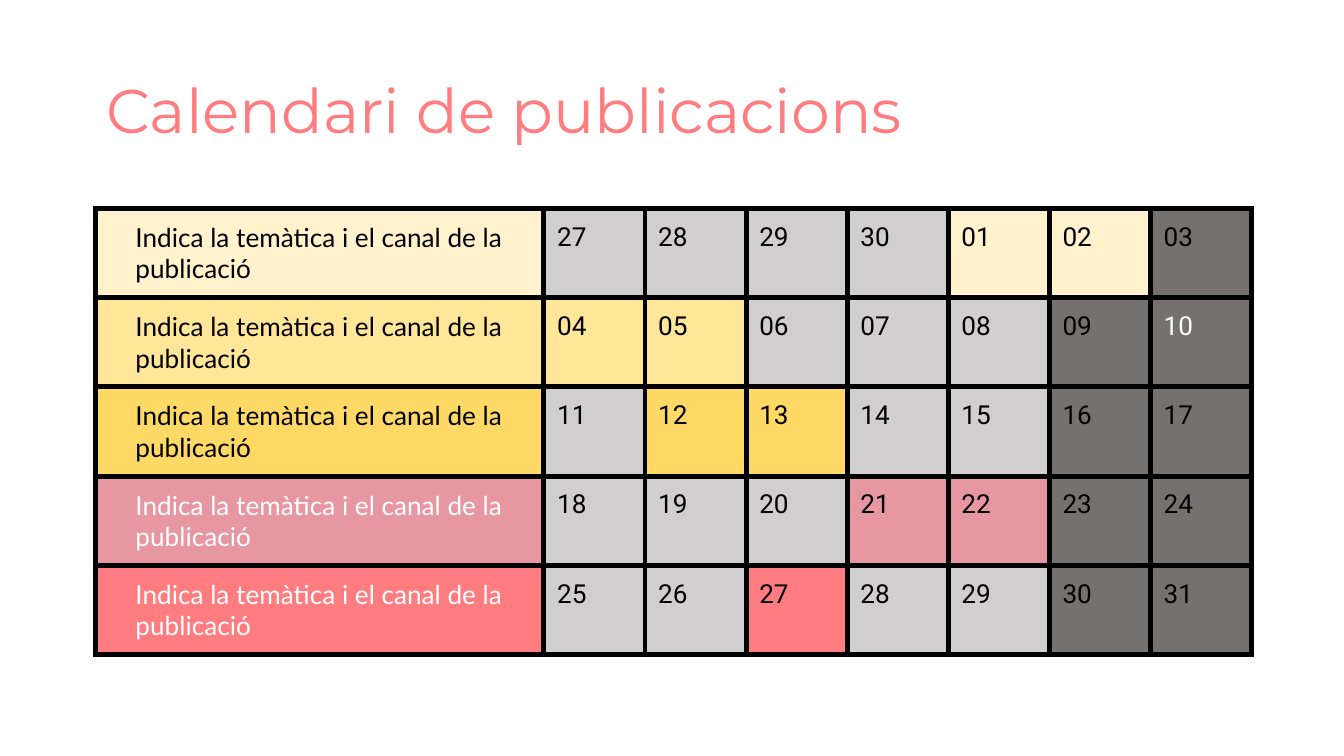
"""Build a slide with a five-week publication calendar."""
from dataclasses import dataclass

from lxml import etree
from pptx import Presentation
from pptx.dml.color import RGBColor
from pptx.enum.text import MSO_ANCHOR, MSO_AUTO_SIZE, PP_ALIGN
from pptx.oxml.ns import qn
from pptx.util import Cm, Pt

MIDDLE = MSO_ANCHOR.MIDDLE
TOP = MSO_ANCHOR.TOP
LEFT = PP_ALIGN.LEFT
NO_AUTOFIT = MSO_AUTO_SIZE.NONE

BLACK = RGBColor(0x00, 0x00, 0x00)
WHITE = RGBColor(0xFF, 0xFF, 0xFF)
CORAL = RGBColor(0xFF, 0x7C, 0x80)
PINK = RGBColor(0xE7, 0x97, 0xA2)
CREAM = RGBColor(0xFF, 0xF2, 0xCC)
YELLOW = RGBColor(0xFF, 0xE6, 0x99)
GOLD = RGBColor(0xFF, 0xD9, 0x66)
LIGHT_GREY = RGBColor(0xD0, 0xCE, 0xCE)
DARK_GREY = RGBColor(0x76, 0x71, 0x71)

TOPIC = "Indica la temàtica i el canal de la publicació"
TOPIC_WIDTH = Cm(8.48)
DAY_WIDTH = Cm(1.91)
WEEK_HEIGHT = Cm(1.65)
DAYS_PER_WEEK = 7
FIRST_DAY = 27
PREVIOUS_MONTH_LENGTH = 30
BORDER_WIDTH = Pt(3)


@dataclass(frozen=True)
class Week:
    colour: RGBColor
    topic_colour: RGBColor
    publishing_days: tuple[int, ...]
    weekend: tuple[int, ...] = (5, 6)
    white_days: tuple[int, ...] = ()


WEEKS = (
    Week(CREAM, BLACK, (4, 5), weekend=(6,)),
    Week(YELLOW, BLACK, (0, 1), white_days=(6,)),
    Week(GOLD, BLACK, (1, 2)),
    Week(PINK, WHITE, (3, 4)),
    Week(CORAL, WHITE, (2,)),
)


def format_text(frame, font: str, size: float, colour: RGBColor) -> None:
    for paragraph in frame.paragraphs:
        paragraph.alignment = LEFT
        for span in paragraph.runs:
            span.font.name = font
            span.font.size = Pt(size)
            span.font.color.rgb = colour


def add_borders(cell) -> None:
    properties = cell._tc.get_or_add_tcPr()
    for side in ("a:lnL", "a:lnR", "a:lnT", "a:lnB"):
        line = etree.SubElement(properties, qn(side), w=str(BORDER_WIDTH))
        fill = etree.SubElement(line, qn("a:solidFill"))
        etree.SubElement(fill, qn("a:srgbClr"), val=str(BLACK))


def fill_cell(cell, text: str, font: str, colour: RGBColor, background: RGBColor) -> None:
    add_borders(cell)
    cell.fill.solid()
    cell.fill.fore_color.rgb = background
    cell.margin_left = cell.margin_right = Cm(0.25)
    cell.margin_top = cell.margin_bottom = Cm(0.25)
    cell.vertical_anchor = TOP
    cell.text_frame.text = text
    format_text(cell.text_frame, font, 14, colour)


def draw_week(table, row: int, week: Week) -> None:
    table.rows[row].height = WEEK_HEIGHT
    topic = table.cell(row, 0)
    fill_cell(topic, TOPIC, "Lato", week.topic_colour, week.colour)
    topic.margin_left, topic.margin_right = Cm(0.76), Cm(0.51)
    topic.vertical_anchor = MIDDLE
    for day in range(DAYS_PER_WEEK):
        date = FIRST_DAY + row * DAYS_PER_WEEK + day
        if date > PREVIOUS_MONTH_LENGTH:
            date -= PREVIOUS_MONTH_LENGTH
        background = LIGHT_GREY
        if day in week.publishing_days:
            background = week.colour
        elif day in week.weekend:
            background = DARK_GREY
        colour = WHITE if day in week.white_days else BLACK
        fill_cell(table.cell(row, day + 1), f"{date:02d}", "Roboto", colour, background)


def draw_title(page, text: str) -> None:
    title = page.shapes.title
    title.left, title.top = Cm(1.75), Cm(0.76)
    title.width, title.height = Cm(21.9), Cm(2.77)
    frame = title.text_frame
    frame.text = text
    frame.word_wrap = True
    frame.auto_size = NO_AUTOFIT
    frame.vertical_anchor = MIDDLE
    frame.paragraphs[0].line_spacing = 0.9
    format_text(frame, "Montserrat", 33, CORAL)


def draw_calendar(page) -> None:
    table = page.shapes.add_table(
        len(WEEKS), DAYS_PER_WEEK + 1, Cm(1.8), Cm(3.94),
        TOPIC_WIDTH + DAYS_PER_WEEK * DAY_WIDTH, len(WEEKS) * WEEK_HEIGHT,
    ).table
    table.first_row = False
    table.horz_banding = False
    for index, column in enumerate(table.columns):
        column.width = DAY_WIDTH if index else TOPIC_WIDTH
    for row, week in enumerate(WEEKS):
        draw_week(table, row, week)


def main() -> None:
    deck = Presentation()
    deck.slide_width, deck.slide_height = Cm(25.4), Cm(14.29)
    page = deck.slides.add_slide(deck.slide_layouts[5])
    draw_title(page, "Calendari de publicacions")
    draw_calendar(page)
    deck.save("out.pptx")


if __name__ == "__main__":
    main()
